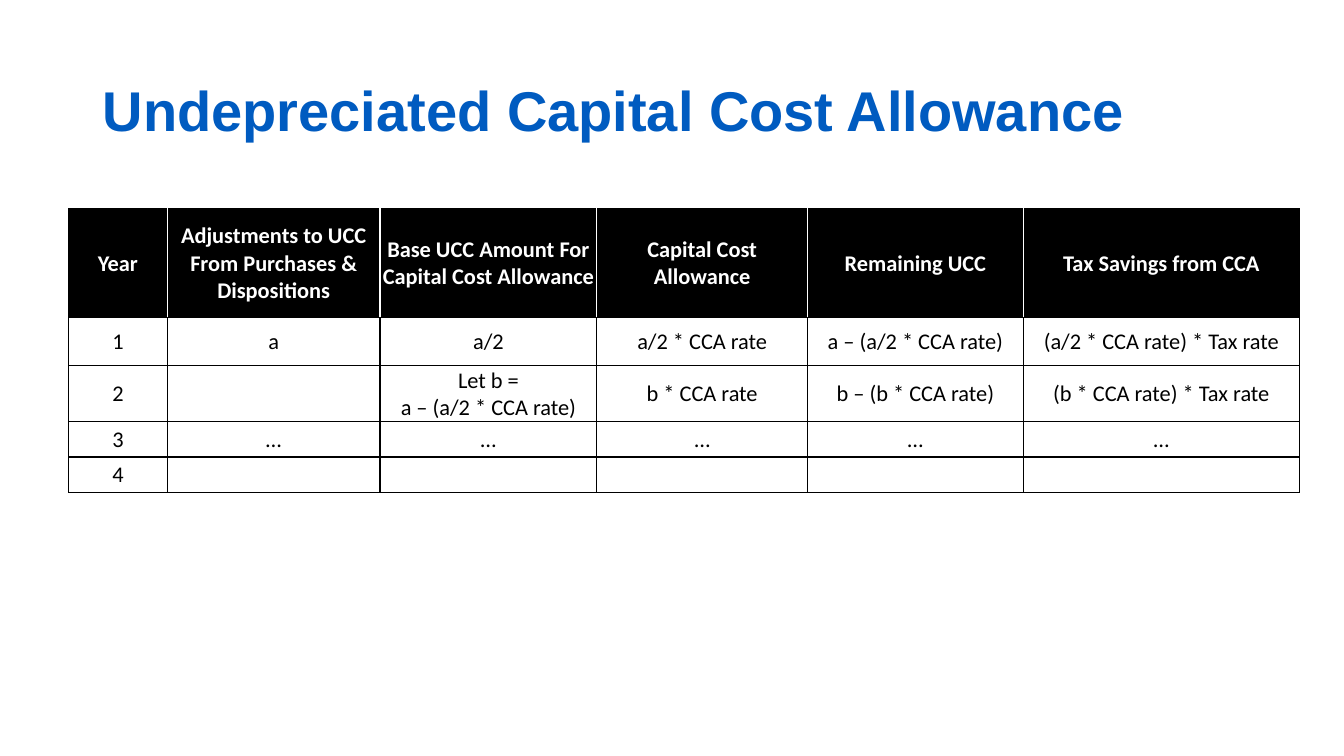
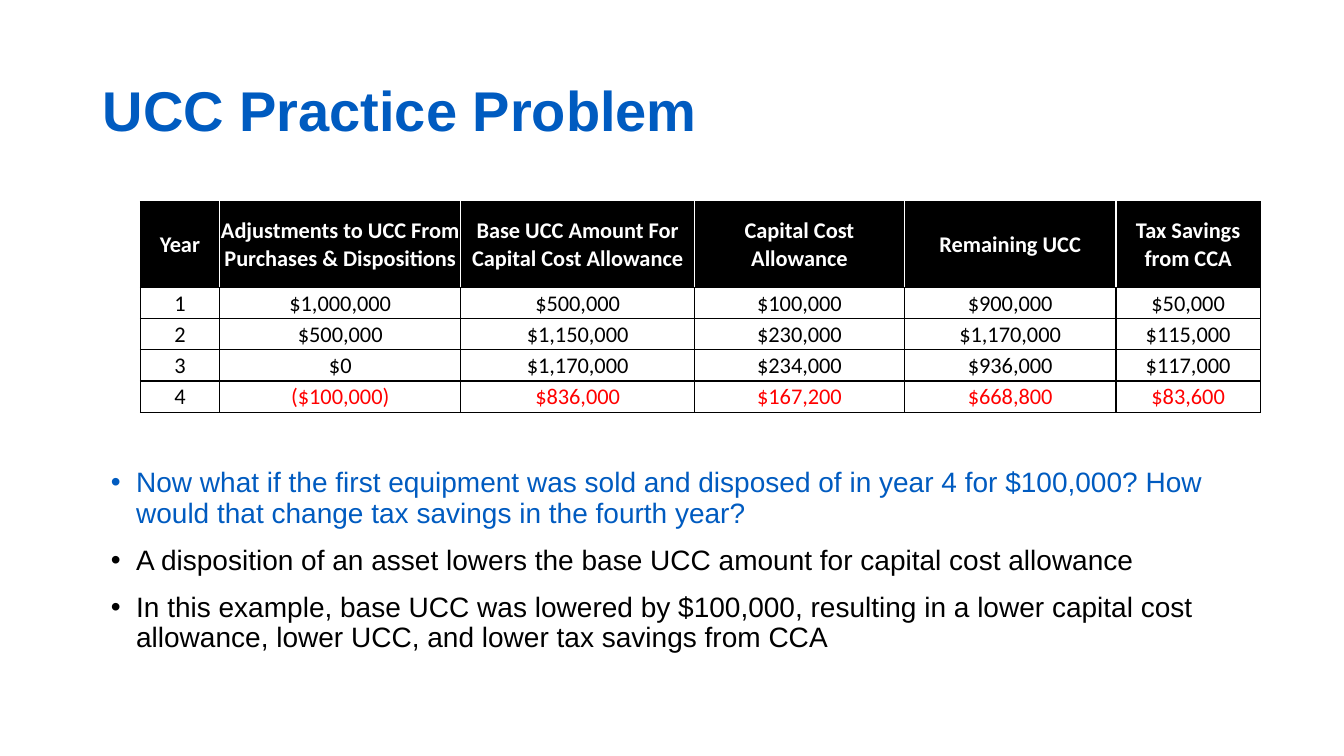
from lxml import etree
from pptx import Presentation
from pptx.dml.color import RGBColor
from pptx.enum.text import MSO_ANCHOR, MSO_AUTO_SIZE, PP_ALIGN
from pptx.oxml.ns import qn
from pptx.util import Inches, Pt

BLUE = RGBColor(0x00, 0x5B, 0xC0)
BLACK = RGBColor(0x00, 0x00, 0x00)
WHITE = RGBColor(0xFF, 0xFF, 0xFF)
RED = RGBColor(0xFF, 0x00, 0x00)

TITLE_FONT = "Arial"
TABLE_FONT = "Calibri"
MIDDLE = MSO_ANCHOR.MIDDLE
TOP = MSO_ANCHOR.TOP
CENTER = PP_ALIGN.CENTER
LEFT = PP_ALIGN.LEFT
NO_AUTOFIT = MSO_AUTO_SIZE.NONE

TITLE_ONLY_LAYOUT = 5
TITLE_AND_BODY_LAYOUT = 1
TITLE_BOX = (0.92, 0.4, 11.5, 1.45)
BODY_BOX = (1, 4.6, 11.5, 2.78)
OUTER_WIDTH = 0.5
INNER_WIDTH = 1

HEADERS = [
    "Year",
    "Adjustments to UCC From Purchases & Dispositions",
    "Base UCC Amount For Capital Cost Allowance",
    "Capital Cost Allowance",
    "Remaining UCC",
    "Tax Savings from CCA",
]
FORMULA_ROWS = [
    ["1", "a", "a/2", "a/2 * CCA rate", "a – (a/2 * CCA rate)",
     "(a/2 * CCA rate) * Tax rate"],
    ["2", "", "Let b =\na – (a/2 * CCA rate)", "b * CCA rate",
     "b – (b * CCA rate)", "(b * CCA rate) * Tax rate"],
    ["3", "…", "…", "…", "…", "…"],
    ["4", "", "", "", "", ""],
]
PRACTICE_ROWS = [
    ["1", "$1,000,000", "$500,000", "$100,000", "$900,000", "$50,000"],
    ["2", "$500,000", "$1,150,000", "$230,000", "$1,170,000", "$115,000"],
    ["3", "$0", "$1,170,000", "$234,000", "$936,000", "$117,000"],
    ["4", "($100,000)", "$836,000", "$167,200", "$668,800", "$83,600"],
]
PRACTICE_BULLETS = [
    ("Now what if the first equipment was sold and disposed of in year 4 for "
     "$100,000? How would that change tax savings in the fourth year?", BLUE),
    ("A disposition of an asset lowers the base UCC amount for capital cost "
     "allowance", BLACK),
    ("In this example, base UCC was lowered by $100,000, resulting in a lower "
     "capital cost allowance, lower UCC, and lower tax savings from CCA", BLACK),
]


def place(shape, box):
    shape.left, shape.top, shape.width, shape.height = map(Inches, box)


def format_runs(paragraph, font_name, size, color, bold=False):
    for run in paragraph.runs:
        run.font.name = font_name
        run.font.size = Pt(size)
        run.font.bold = bold
        run.font.color.rgb = color


def add_titled_slide(presentation, layout_index, title_text):
    slide = presentation.slides.add_slide(presentation.slide_layouts[layout_index])
    title = slide.shapes.title
    place(title, TITLE_BOX)
    frame = title.text_frame
    frame.text = title_text
    frame.auto_size = NO_AUTOFIT
    frame.vertical_anchor = MIDDLE
    paragraph = frame.paragraphs[0]
    paragraph.alignment = LEFT
    paragraph.line_spacing = 0.9
    format_runs(paragraph, TITLE_FONT, 40, BLUE, bold=True)
    return slide


def fill_bullets(body, box, bullets):
    """Write (text, colour) pairs as a bulleted list in the body placeholder."""
    place(body, box)
    frame = body.text_frame
    frame.text = "\n".join(text for text, _ in bullets)
    frame.auto_size = NO_AUTOFIT
    frame.vertical_anchor = TOP
    for paragraph, (_, color) in zip(frame.paragraphs, bullets):
        paragraph.line_spacing = 0.9
        paragraph.space_before = Pt(12)
        format_runs(paragraph, TITLE_FONT, 20, color)
        properties = paragraph._p.get_or_add_pPr()
        properties.set("marL", str(Inches(0.25)))
        properties.set("indent", str(-Inches(0.25)))
        etree.SubElement(properties, qn("a:buFont"), typeface="Arial")
        etree.SubElement(properties, qn("a:buChar"), char="•")


def set_borders(cell, borders):
    """Draw borders given as side: (colour, width); call before filling the cell."""
    properties = cell._tc.get_or_add_tcPr()
    for side, (color, width) in borders.items():
        line = etree.SubElement(properties, qn(f"a:ln{side}"), w=str(Pt(width)))
        fill = etree.SubElement(line, qn("a:solidFill"))
        etree.SubElement(fill, qn("a:srgbClr"), val=str(color))


def cell_borders(row, column, last_row, last_column):
    outer = (BLACK, OUTER_WIDTH)
    inner = (BLACK, INNER_WIDTH)
    divider = (WHITE, INNER_WIDTH) if row == 0 else inner
    return {
        "L": outer if column == 0 else divider,
        "R": outer if column == last_column else divider,
        "T": outer if row <= 1 else inner,
        "B": outer if row in (0, last_row) else inner,
    }


def format_cell(cell, text, color, is_header):
    cell.text = text
    cell.vertical_anchor = MIDDLE
    cell.margin_left = cell.margin_right = cell.margin_top = Inches(0.01)
    cell.margin_bottom = 0
    for paragraph in cell.text_frame.paragraphs:
        paragraph.alignment = CENTER
        format_runs(paragraph, TABLE_FONT, 16, color, bold=is_header)
    if is_header:
        cell.fill.solid()
        cell.fill.fore_color.rgb = BLACK
    else:
        cell.fill.background()


def add_ucc_table(slide, left, top, column_widths, row_heights, rows, red_row=None):
    """Add the header and rows; red_row has red amounts beside its black year."""
    contents = [HEADERS] + rows
    last_row, last_column = len(contents) - 1, len(HEADERS) - 1
    table = slide.shapes.add_table(
        len(contents), len(HEADERS), Inches(left), Inches(top),
        Inches(sum(column_widths)), Inches(sum(row_heights))).table
    table.first_row = table.horz_banding = False
    for column, width in zip(table.columns, column_widths):
        column.width = Inches(width)
    for row, height in zip(table.rows, row_heights):
        row.height = Inches(height)
    for row_index, texts in enumerate(contents):
        for column_index, text in enumerate(texts):
            cell = table.cell(row_index, column_index)
            is_header = row_index == 0
            color = WHITE if is_header else BLACK
            if row_index == red_row and column_index > 0:
                color = RED
            set_borders(cell, cell_borders(row_index, column_index,
                                           last_row, last_column))
            format_cell(cell, text, color, is_header)


def add_formula_slide(presentation):
    slide = add_titled_slide(presentation, TITLE_ONLY_LAYOUT,
                             "Undepreciated Capital Cost Allowance")
    add_ucc_table(slide, 0.68, 2.07, [0.98, 2.11, 2.15, 2.09, 2.14, 2.74],
                  [1.08, 0.48, 0.55, 0.35, 0.35], FORMULA_ROWS)


def add_practice_slide(presentation):
    slide = add_titled_slide(presentation, TITLE_AND_BODY_LAYOUT,
                             "UCC Practice Problem")
    fill_bullets(slide.placeholders[1], BODY_BOX, PRACTICE_BULLETS)
    add_ucc_table(slide, 1.39, 2, [0.79, 2.39, 2.32, 2.08, 2.1, 1.43],
                  [0.85] + [0.31] * 4, PRACTICE_ROWS, red_row=4)


def main():
    presentation = Presentation()
    presentation.slide_width = Inches(13.33)
    presentation.slide_height = Inches(7.5)
    add_formula_slide(presentation)
    add_practice_slide(presentation)
    presentation.save("out.pptx")


if __name__ == "__main__":
    main()
